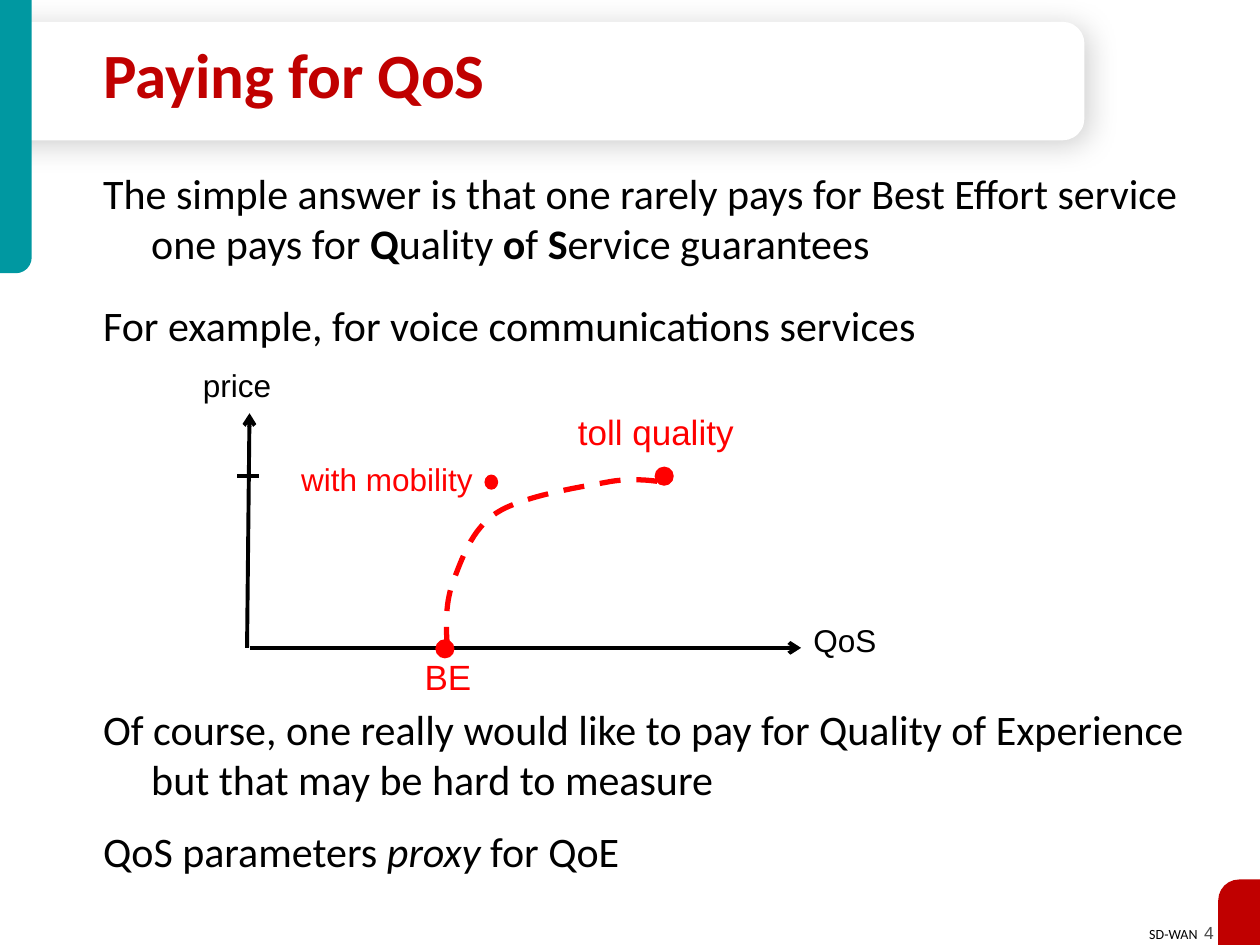
from dataclasses import dataclass

import pptx
import pptx.dml.color
import pptx.enum.dml
import pptx.enum.shapes
import pptx.enum.text
import pptx.oxml
import pptx.oxml.ns
import pptx.util

Cm, Pt = pptx.util.Cm, pptx.util.Pt
SHAPE = pptx.enum.shapes.MSO_SHAPE
ALIGN = pptx.enum.text.PP_ALIGN
ANCHOR = pptx.enum.text.MSO_ANCHOR
COLORS = {"black": "000000", "white": "FFFFFF", "teal": "0098A1",
          "crimson": "C00000", "red": "FF0000", "gray": "4D4D4D"}
HANG = 0.97  # indent of continuation lines, cm


@dataclass
class Block:
    """A filled shape; lengths in cm."""
    kind: int
    box: tuple
    color: str
    adjustments: tuple = ()
    flip: str = ""
    rotation: int = 0
    outlined: bool = False


@dataclass
class Label:
    text: str
    box: tuple
    size: int
    color: str


@dataclass
class Axis:
    start: tuple
    end: tuple
    arrow: bool = True


@dataclass
class BodyLine:
    """Runs are (text, style), style being '', 'b' or 'i'."""
    runs: list
    before: int = 0
    continued: bool = False


BLOCKS = [
    Block(SHAPE.ROUND_2_SAME_RECTANGLE, (9.73, -9.3, 2.39, 21.87), "white", (0.184, 0), rotation=90),
    Block(SHAPE.ROUND_1_RECTANGLE, (0, 0, 0.64, 5.51), "teal", (0.5,), "flipV"),
    Block(SHAPE.ROUND_1_RECTANGLE, (24.56, 17.73, 0.84, 1.32), "crimson", (0.5,), "flipH"),
]
BODY = [
    BodyLine([("The simple answer is that one rarely pays for Best Effort service", "")], 6),
    BodyLine([("one pays for ", ""), ("Q", "b"), ("uality ", ""), ("o", "b"), ("f ", ""),
              ("S", "b"), ("ervice guarantees", "")], continued=True),
    BodyLine([("For example, for voice communications services", "")], 18),
    # The space before this line holds the graph
    BodyLine([("Of course, one really would like to pay for Quality of Experience", "")], 202),
    BodyLine([("but that may be hard to measure", "")], continued=True),
    BodyLine([("QoS parameters ", ""), ("proxy", "i"), (" for QoE", "")], 12),
]
AXES = [
    Axis((5.03, 13.06), (16.15, 13.06)),
    Axis((4.98, 13.06), (5.03, 8.33)),
    Axis((4.78, 9.6), (5.23, 9.6), arrow=False),
]
LABELS = [
    Label("QoS", (16.15, 12.4, 2.18, 1.27), 18, "black"),
    Label("price", (3.84, 7.26, 2.67, 1.27), 18, "black"),
    Label("BE", (8.31, 13.08, 1.57, 1.12), 20, "red"),
    Label("toll quality", (11.4, 8.15, 4.42, 1.12), 20, "red"),
    Label("with mobility", (5.82, 9.14, 4.42, 1.02), 18, "red"),
]
SERVICE_DOTS = [
    Block(SHAPE.OVAL, box, "red", outlined=True)
    for box in [(8.79, 12.9, 0.36, 0.36), (13.21, 9.42, 0.36, 0.36), (9.78, 9.58, 0.25, 0.28)]
]
# Bezier points: a start, then two controls and an end per segment
PRICE_CURVE = [
    (9.02, 13.06), (8.99, 12.65), (8.97, 12.22), (9.12, 11.76),
    (9.3, 11.3), (9.5, 10.67), (10.01, 10.34),
    (10.52, 10.01), (11.63, 9.83), (12.19, 9.73),
    (12.78, 9.6), (13.41, 9.73), (13.41, 9.73),
]


def rgb(name: str) -> pptx.dml.color.RGBColor:
    return pptx.dml.color.RGBColor.from_string(COLORS[name])


def style_font(font, size: float, color: str, family: str) -> None:
    font.size, font.name, font.color.rgb = Pt(size), family, rgb(color)


def style_line(line, color: str, width: float) -> None:
    line.color.rgb, line.width = rgb(color), Pt(width)


def add_block(slide, block: Block):
    shape = slide.shapes.add_shape(block.kind, *map(Cm, block.box))
    shape.shadow.inherit = False
    shape.fill.solid()
    shape.fill.fore_color.rgb = rgb(block.color)
    shape.rotation = block.rotation
    for index, value in enumerate(block.adjustments):
        shape.adjustments[index] = value
    if block.flip:
        shape._element.spPr.xfrm.set(block.flip, "1")
    if block.outlined:
        style_line(shape.line, block.color, 0.75)
    else:
        shape.line.fill.background()
    return shape


def add_soft_shadow(shape) -> None:
    effects = shape._element.spPr.find(pptx.oxml.ns.qn("a:effectLst"))
    effects.append(pptx.oxml.parse_xml(
        f'<a:outerShdw {pptx.oxml.ns.nsdecls("a")} blurRad="{Pt(17)}" dist="{Pt(3)}" '
        f'dir="2700000" algn="ctr" rotWithShape="0"><a:srgbClr val="{COLORS["black"]}">'
        '<a:alpha val="19000"/></a:srgbClr></a:outerShdw>'))


def add_text_frame(slide, box: tuple, wrap: bool = True):
    frame = slide.shapes.add_textbox(*map(Cm, box)).text_frame
    frame.word_wrap = wrap
    return frame


def add_label(slide, label: Label, family: str = "Arial"):
    frame = add_text_frame(slide, label.box)
    paragraph = frame.paragraphs[0]
    paragraph.text = label.text
    style_font(paragraph.font, label.size, label.color, family)
    return frame


def add_body(slide, lines: list) -> None:
    frame = add_text_frame(slide, (1.83, 3.25, 23.14, 14.99))
    for index, line in enumerate(lines):
        paragraph = frame.add_paragraph() if index else frame.paragraphs[0]
        style_font(paragraph.font, 24, "black", "Calibri")
        paragraph.space_before = Pt(line.before)
        properties = paragraph._p.get_or_add_pPr()
        properties.set("marL", str(Cm(HANG)))
        properties.set("indent", str(0 if line.continued else -Cm(HANG)))
        for text, style in line.runs:
            run = paragraph.add_run()
            run.text = text
            if style == "b":
                run.font.bold = True
            elif style == "i":
                run.font.italic = True


def add_axis(slide, axis: Axis) -> None:
    line = slide.shapes.add_connector(
        pptx.enum.shapes.MSO_CONNECTOR.STRAIGHT, *map(Cm, axis.start + axis.end))
    style_line(line.line, "black", 2.25)
    if axis.arrow:
        pptx.oxml.ns.qn("a:tailEnd")
        line.line._get_or_add_ln().append(pptx.oxml.parse_xml(
            f'<a:tailEnd {pptx.oxml.ns.nsdecls("a")} type="arrow"/>'))
    line._element.spPr.append(pptx.oxml.parse_xml(
        f'<a:effectLst {pptx.oxml.ns.nsdecls("a")}/>'))


def add_curve(slide, points: list, steps: int = 16) -> None:
    traced = []
    for first in range(0, len(points) - 1, 3):
        segment = points[first:first + 4]
        for step in range(1, steps + 1):
            t = step / steps
            weights = ((1 - t) ** 3, 3 * t * (1 - t) ** 2, 3 * t * t * (1 - t), t ** 3)
            traced.append(tuple(Cm(sum(w * p[axis] for w, p in zip(weights, segment)))
                                for axis in (0, 1)))
    builder = slide.shapes.build_freeform(*map(Cm, points[0]))
    builder.add_line_segments(traced, close=False)
    curve = builder.convert_to_shape()
    curve.shadow.inherit = False
    curve.fill.background()
    style_line(curve.line, "red", 3)
    curve.line.dash_style = pptx.enum.dml.MSO_LINE.DASH


def add_footer(slide) -> None:
    paragraph = add_text_frame(slide, (22.66, 18.47, 2.06, 0.69), wrap=False).paragraphs[0]
    paragraph.alignment = ALIGN.RIGHT
    for text, size, color, family in [("SD-WAN  ", 8, "black", "Calibri"), ("4", 10, "gray", "Arial")]:
        run = paragraph.add_run()
        run.text = text
        style_font(run.font, size, color, family)


def main() -> None:
    deck = pptx.Presentation()
    deck.slide_width, deck.slide_height = Cm(25.4), Cm(19.05)
    slide = deck.slides.add_slide(deck.slide_layouts[6])

    # Frame: footer, title panel, side bar and corner
    add_footer(slide)
    title_panel, *_ = [add_block(slide, block) for block in BLOCKS]
    add_soft_shadow(title_panel)

    # Title and body
    title = add_label(slide, Label("Paying for QoS", (1.83, 0.69, 13.84, 1.8), 36, "crimson"), "Calibri")
    title.vertical_anchor = ANCHOR.MIDDLE
    title.paragraphs[0].font.bold = True
    title.paragraphs[0].line_spacing = 0.85
    add_body(slide, BODY)

    # Graph of price against QoS
    for axis in AXES:
        add_axis(slide, axis)
    for label in LABELS:
        add_label(slide, label)
    for dot in SERVICE_DOTS:
        add_block(slide, dot)
    add_curve(slide, PRICE_CURVE)

    deck.save("out.pptx")


if __name__ == "__main__":
    main()
